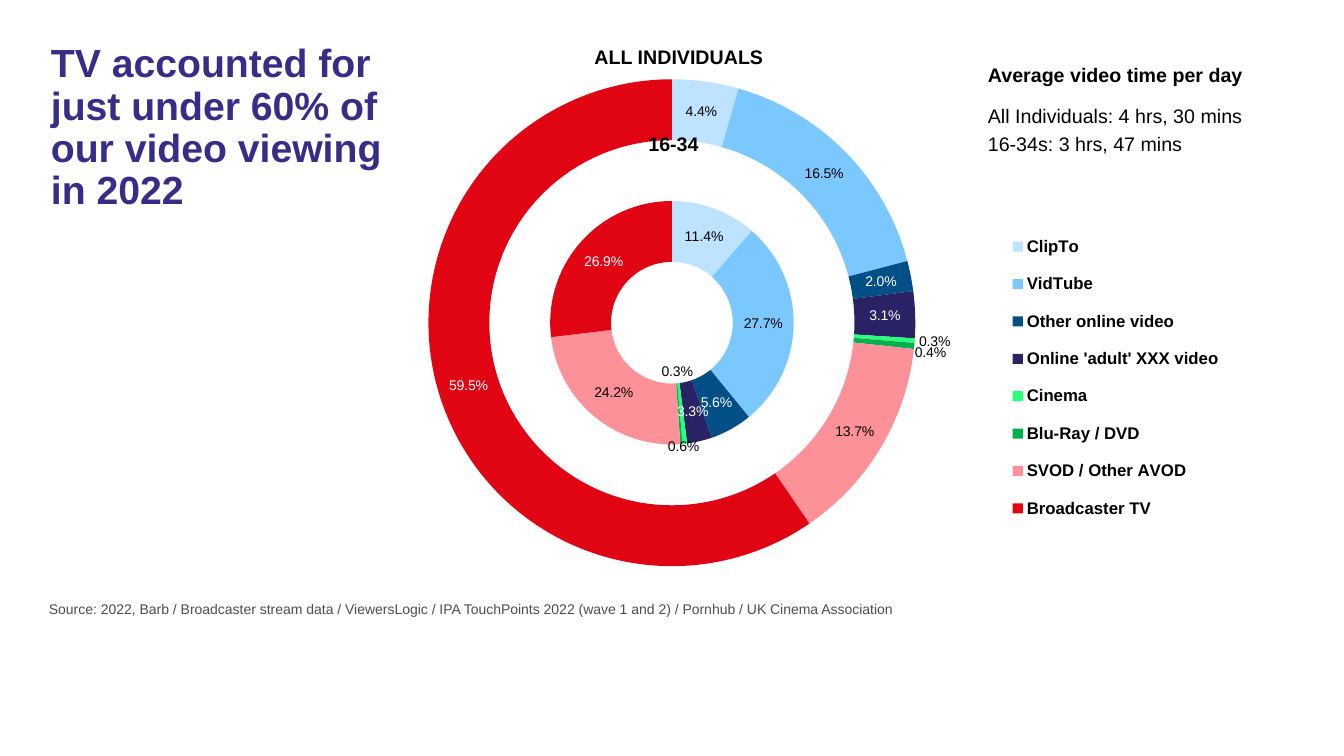
from lxml import etree
from pptx import Presentation
from pptx import util as u
from pptx.chart.data import CategoryChartData
from pptx.dml.color import RGBColor
from pptx.enum import chart as ch, text
from pptx.oxml import ns

EMU_PER_PX = 914400 / 100.8
FONT = "Arial"
SLICES = [
    ("ClipTo", "BDE3FF", "000000"),
    ("VidTube", "7BC8FF", "000000"),
    ("Other online video", "004F87", "FFFFFF"),
    ("Online 'adult' XXX video", "292265", "FFFFFF"),
    ("Cinema", "2AFF7C", "000000"),
    ("Blu-Ray / DVD", "00B050", "000000"),
    ("SVOD / Other AVOD", "FD9199", "000000"),
    ("Broadcaster TV", "E10514", "FFFFFF"),
]
YOUNG = [11.4, 27.7, 5.6, 3.3, 0.6, 0.3, 24.2, 26.9]
EVERYONE = [4.4, 16.5, 2.0, 3.1, 0.3, 0.4, 13.7, 59.5]
YOUNG_SHIFTS = {4: (2, 34), 5: (-2, -42)}
EVERYONE_SHIFTS = {4: (50, 3), 5: (46, 10)}


def px(n):
    return u.Emu(round(n * EMU_PER_PX))


def color(value):
    return RGBColor.from_string(value)


def style(font, size, value="000000", bold=False):
    font.name = FONT
    font.size = u.Pt(size)
    font.bold = bold
    font.color.rgb = color(value)


def add_text(s, box, words, size, value="000000", bold=False, align=None, spacing=None):
    tf = s.shapes.add_textbox(*map(px, box)).text_frame
    tf.word_wrap = True
    p = tf.paragraphs[0]
    p.alignment = align
    p.line_spacing = spacing
    r = p.add_run()
    r.text = words
    style(r.font, size, value, bold)


def make_layout(**values):
    layout = etree.Element(ns.qn("c:layout"))
    manual = etree.SubElement(layout, ns.qn("c:manualLayout"))
    for tag, value in values.items():
        etree.SubElement(manual, ns.qn(f"c:{tag}")).set("val", str(value))
    return layout


def frame_layout(x, y, w, h, **target):
    return make_layout(**target, xMode="edge", yMode="edge", x=x, y=y, w=w, h=h)


def replace_layout(parent, layout, index):
    for old in parent.findall(ns.qn("c:layout")):
        parent.remove(old)
    parent.insert(index, layout)


def style_ring(series, shifts, width, height):
    labels = series.data_labels
    labels.show_value = True
    style(labels.font, 10, "FFFFFF")
    for i, (_, fill, ink) in enumerate(SLICES):
        point = series.points[i]
        point.format.fill.solid()
        point.format.fill.fore_color.rgb = color(fill)
        point.format.line.fill.background()
        style(point.data_label.font, 10, ink)
    for label in labels._element.findall(ns.qn("c:dLbl")):
        idx = label.find(ns.qn("c:idx"))
        shift = shifts.get(int(idx.get("val")))
        if shift:
            dx, dy = shift
            idx.addnext(make_layout(x=round(dx / width, 3), y=round(dy / height, 3)))


def add_rings(s, box):
    left, top, width, height = box
    data = CategoryChartData(number_format='0.0"%"')
    data.categories = [name for name, _, _ in SLICES]
    data.add_series("16-34", YOUNG)
    data.add_series("Gap", [None] * len(SLICES))
    data.add_series("All individuals", EVERYONE)
    chart = s.shapes.add_chart(ch.XL_CHART_TYPE.DOUGHNUT, *map(px, box), data).chart
    chart.has_title = False
    style(chart.font, 18)
    plot = chart.plots[0]
    plot.vary_by_categories = True
    plot._element.find(ns.qn("c:holeSize")).set("val", "47")
    young, _, everyone = plot.series
    style_ring(young, YOUNG_SHIFTS, width, height)
    style_ring(everyone, EVERYONE_SHIFTS, width, height)
    area = plot._element.getparent()
    replace_layout(area, frame_layout(0.11, 0.095, 0.503, 0.811, layoutTarget="inner"), 0)

    chart.has_legend = True
    legend = chart.legend
    legend.position = ch.XL_LEGEND_POSITION.RIGHT
    legend.include_in_layout = False
    style(legend.font, 12, bold=True)
    replace_layout(legend._element, frame_layout(0.7, 0.33, 0.24, 0.52), 1)

    center = text.PP_ALIGN.CENTER
    add_text(s, (left + 260, top + 24, 194, 34), "ALL INDIVIDUALS", 14, bold=True, align=center)
    add_text(s, (left + 292, top + 111, 119, 34), "16-34", 14, bold=True, align=center)


def add_daily_time(s, box):
    left, top, width, height = box
    rows = [
        (0, "Average video time per day", True),
        (41, "All Individuals: 4 hrs, 30 mins", False),
        (69, "16-34s: 3 hrs, 47 mins", False),
    ]
    for offset, words, bold in rows:
        add_text(s, (left, top + offset, width, height - 69), words, 14, bold=bold)


def main():
    prs = Presentation()
    prs.slide_width, prs.slide_height = px(1344), px(756)
    s = prs.slides.add_slide(prs.slide_layouts[6])
    add_rings(s, (322, 16, 968, 613))
    add_text(s, (41, 39, 385, 278),
             "TV accounted for just under 60% of our video viewing in 2022",
             28, "372D88", True, spacing=0.9)
    add_daily_time(s, (978, 58, 301, 103))
    add_text(s, (39, 596, 1250, 33),
             "Source: 2022, Barb / Broadcaster stream data / ViewersLogic / "
             "IPA TouchPoints 2022 (wave 1 and 2) / Pornhub / UK Cinema Association",
             10, "4D4D4D")
    prs.save("out.pptx")


if __name__ == "__main__":
    main()
